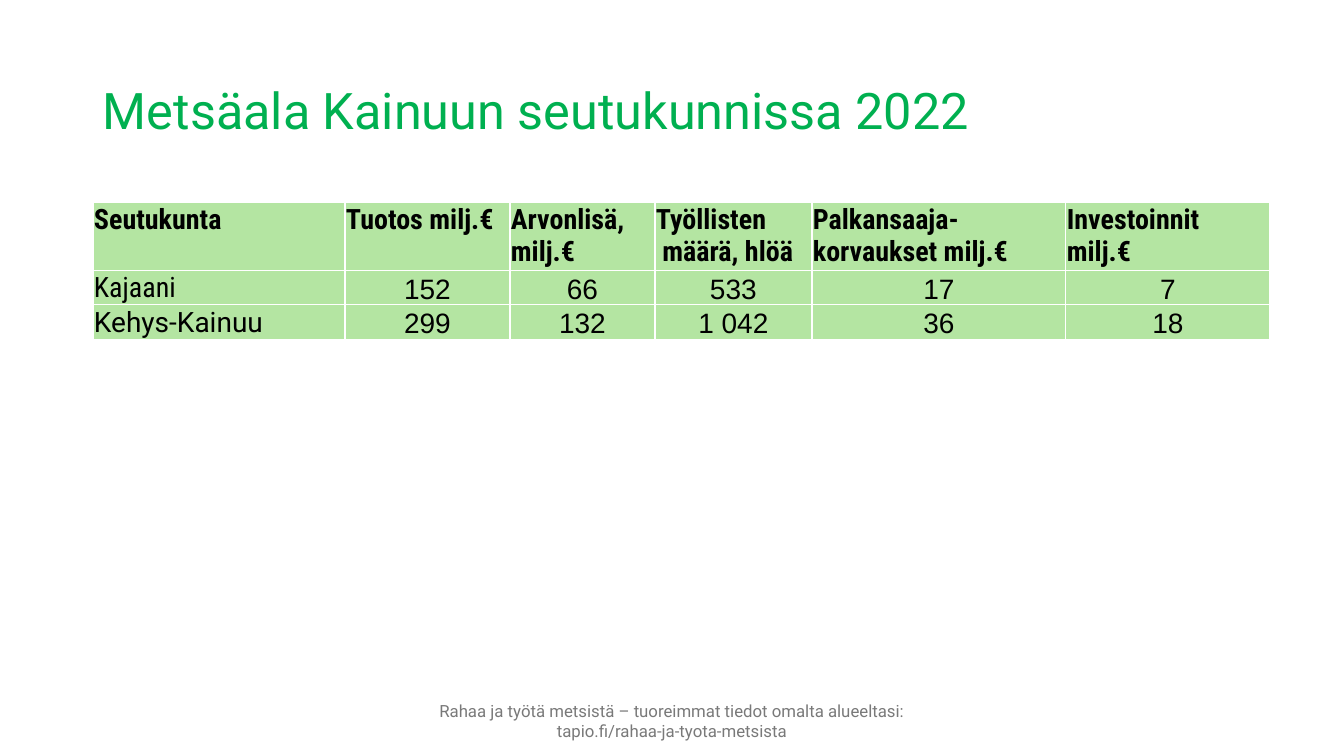
from dataclasses import dataclass

from lxml.etree import SubElement
from pptx import Presentation
from pptx.dml.color import RGBColor
from pptx.enum.text import MSO_ANCHOR, PP_ALIGN
from pptx.oxml.ns import qn
from pptx.util import Pt

PX = 914400 / 100.8


@dataclass(frozen=True)
class Theme:
    title: str = "00B050"
    footer: str = "797979"
    text: str = "000000"
    cell: str = "B4E5A2"
    border: str = "FFFFFF"
    title_size: int = 36
    table_size: int = 20
    footer_size: int = 12
    body_font: str = "Roboto"
    narrow_font: str = "Roboto Condensed"
    number_font: str = "Arial"


theme = Theme()


def px(*lengths):
    return [round(length * PX) for length in lengths]


def write(frame, text, font_name, size, color, align=PP_ALIGN.LEFT, bold=False):
    """Fill a text frame, one paragraph per line of text."""
    frame.word_wrap = True
    frame.text = text
    for paragraph in frame.paragraphs:
        paragraph.alignment = align
        paragraph.font.name = font_name
        paragraph.font.size = Pt(size)
        paragraph.font.bold = bold
        paragraph.font.color.rgb = RGBColor.from_string(color)


presentation = Presentation()
presentation.slide_width, presentation.slide_height = px(1344, 756)
slide = presentation.slides.add_slide(presentation.slide_layouts[6])

# Title and footer
title = slide.shapes.add_textbox(*px(93, 40, 1159, 146)).text_frame
write(title, "Metsäala Kainuun seutukunnissa 2022",
      theme.body_font, theme.title_size, theme.title)
title.paragraphs[0].line_spacing = 0.9
footer = slide.shapes.add_textbox(*px(429, 701, 486, 40)).text_frame
write(footer, "Rahaa ja työtä metsistä – tuoreimmat tiedot omalta alueeltasi: "
      "tapio.fi/rahaa-ja-tyota-metsista",
      theme.body_font, theme.footer_size, theme.footer, PP_ALIGN.CENTER)
for frame in (title, footer):
    frame.vertical_anchor = MSO_ANCHOR.MIDDLE

# Table of sub-regions
table_rows = [
    ["Seutukunta", "Tuotos milj.€", "Arvonlisä, milj.€", "Työllisten\n määrä, hlöä",
     "Palkansaaja-korvaukset milj.€", "Investoinnit\nmilj.€"],
    ["Kajaani", "152", "66", "533", "17", "7"],
    ["Kehys-Kainuu", "299", "132", "1 042", "36", "18"],
]
column_widths = [252, 165, 145, 157, 254, 204]
row_heights = [66, 34, 34]
label_fonts = [theme.narrow_font, theme.narrow_font, theme.body_font]

table = slide.shapes.add_table(
    len(table_rows), len(column_widths),
    *px(93, 202, sum(column_widths), sum(row_heights))).table
for column, width in zip(table.columns, px(*column_widths)):
    column.width = width
for row, height in zip(table.rows, px(*row_heights)):
    row.height = height

for row_index, values in enumerate(table_rows):
    is_header = row_index == 0
    for column_index, value in enumerate(values):
        cell = table.cell(row_index, column_index)
        is_number = not is_header and column_index > 0
        inset = 0 if is_number else px(1)[0]
        cell.margin_left = cell.margin_right = cell.margin_top = inset
        cell.margin_bottom = 0
        cell.vertical_anchor = MSO_ANCHOR.TOP if is_header else MSO_ANCHOR.BOTTOM
        write(cell.text_frame, value,
              theme.number_font if is_number else label_fonts[row_index],
              theme.table_size, theme.text,
              PP_ALIGN.CENTER if is_number else PP_ALIGN.LEFT, is_header)

        properties = cell._tc.get_or_add_tcPr()
        for side in ("lnL", "lnR", "lnT", "lnB"):
            line = SubElement(properties, qn(f"a:{side}"), w=str(Pt(1)))
            line_fill = SubElement(line, qn("a:solidFill"))
            SubElement(line_fill, qn("a:srgbClr"), val=theme.border)
        cell.fill.solid()
        cell.fill.fore_color.rgb = RGBColor.from_string(theme.cell)
        # The schema wants the fill after the border lines
        properties.append(properties.find(qn("a:solidFill")))

presentation.save("out.pptx")
